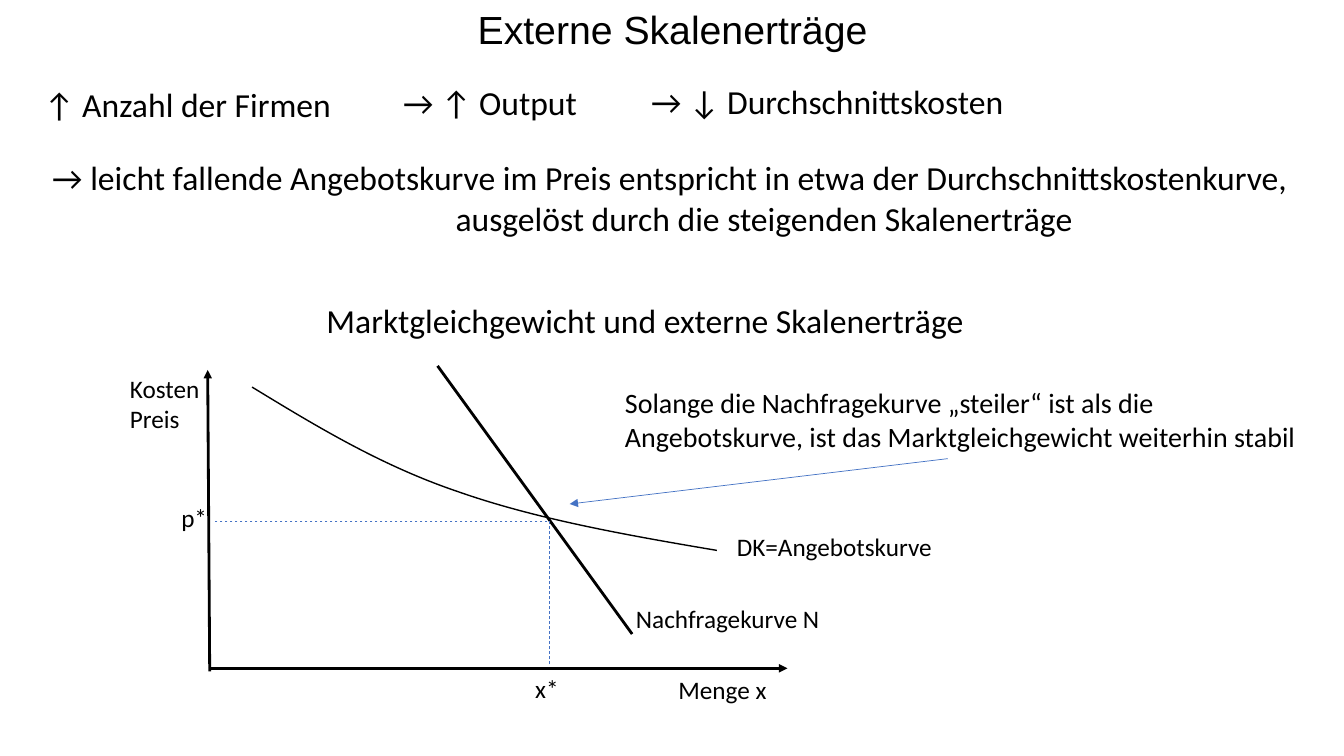
"""Build the slide on external economies of scale."""
from lxml.etree import SubElement
from pptx import Presentation
from pptx.dml.color import RGBColor
from pptx.enum.dml import MSO_LINE_DASH_STYLE as Dash
from pptx.enum.shapes import MSO_CONNECTOR as Connector
from pptx.enum.text import MSO_ANCHOR as Anchor, MSO_AUTO_SIZE as Fit, PP_ALIGN as Align
from pptx.oxml.ns import qn
from pptx.util import Inches, Pt

BLACK = RGBColor(0x00, 0x00, 0x00)
BLUE = RGBColor(0x44, 0x72, 0xC4)
WIDTH, HEIGHT = Inches(13.33), Inches(7.5)
COLUMNS, ROWS = 1333, 750

TITLE = {"size": Pt(28), "name": "Arial"}
BODY = {"size": Pt(24), "name": "Calibri"}
NOTE = {"size": Pt(20), "name": "Calibri"}
LABEL = {"size": Pt(18), "name": "Calibri"}
WRAPPED = {"word_wrap": True, "auto_size": Fit.NONE}
GROWING = {"word_wrap": True, "auto_size": Fit.SHAPE_TO_FIT_TEXT}
TIGHT = {"word_wrap": False, "auto_size": Fit.SHAPE_TO_FIT_TEXT}
CENTRED = {**WRAPPED, "vertical_anchor": Anchor.MIDDLE}
CENTRED_LINE = {"alignment": Align.CENTER, "line_spacing": 0.9}

TEXTS = [
    ((167, -3, 1000, 70), ["Externe Skalenerträge"], TITLE, CENTRED, CENTRED_LINE),
    ((34, 78, 307, 56), ["↑ Anzahl der Firmen"], BODY, WRAPPED, {}),
    ((390, 76, 202, 50), ["→ ↑ Output"], BODY, TIGHT, {}),
    ((636, 75, 373, 50), ["→ ↓ Durchschnittskosten"], BODY, TIGHT, {}),
    ((42, 151, 1257, 50), [
        "→ leicht fallende Angebotskurve im Preis entspricht in etwa der Durchschnittskostenkurve,",
        "ausgelöst durch die steigenden Skalenerträge"], BODY, WRAPPED, {}),
    ((314, 293, 656, 59), ["Marktgleichgewicht und externe Skalenerträge"], BODY, WRAPPED, {}),
    ((610, 378, 690, 59), [
        "Solange die Nachfragekurve „steiler“ ist als die Angebotskurve, "
        "ist das Marktgleichgewicht weiterhin stabil"], NOTE, WRAPPED, {}),
    ((119, 365, 90, 71), ["Kosten", "Preis"], LABEL, TIGHT, {}),
    ((663, 664, 109, 40), ["Menge x"], LABEL, TIGHT, {}),
    ((721, 522, 220, 40), ["DK=Angebotskurve"], LABEL, GROWING, {}),
    ((621, 594, 210, 40), ["Nachfragekurve N"], LABEL, GROWING, {}),
    ((170, 493, 46, 40), ["p*"], LABEL, TIGHT, {}),
    ((521, 663, 44, 40), ["x*"], LABEL, TIGHT, {}),
]
SECOND_LINE_INDENT = 400

AXIS = {"color": BLACK, "width": Pt(2), "arrow": True}
DEMAND = {"color": BLACK, "width": Pt(2)}
GUIDE = {"color": BLUE, "width": Pt(0.5), "dash": Dash.DASH}
POINTER = {"color": BLUE, "width": Pt(0.5), "arrow": True}
LINES = [
    ((208, 666), (206, 367), AXIS),
    ((207, 663), (781, 663), AXIS),
    ((434, 363), (627, 629), DEMAND),
    ((543, 517), (212, 517), GUIDE),
    ((545, 659), (545, 517), GUIDE),
    ((940, 455), (565, 500), POINTER),
]
SUPPLY_START = (250, 384)
SUPPLY_BENDS = [(314, 423), (378, 462), (455, 488), (532, 515), (622, 531), (711, 546)]


def place(column, row):
    return round(column * WIDTH / COLUMNS), round(row * HEIGHT / ROWS)


def apply(target, values):
    for name, value in values.items():
        setattr(target, name, value)


def add_text(page, area, lines, font, frame_format, para_format):
    box = page.shapes.add_textbox(*place(*area[:2]), *place(*area[2:]))
    frame = box.text_frame
    apply(frame, frame_format)
    for index, line in enumerate(lines):
        para = frame.paragraphs[0] if index == 0 else frame.add_paragraph()
        apply(para, para_format)
        span = para.add_run()
        span.text = line
        apply(span.font, font)
        span.font.color.rgb = BLACK
        if index and font is BODY:
            indent = place(SECOND_LINE_INDENT, 0)[0]
            para._p.get_or_add_pPr().set("marL", str(indent))


def style_line(line, color, width, dash=None, arrow=False):
    line.color.rgb = color
    apply(line, {"width": width, "dash_style": dash})
    if arrow:
        SubElement(line._get_or_add_ln(), qn("a:tailEnd"), type="triangle")


def add_line(page, start, end, style):
    line = page.shapes.add_connector(Connector.STRAIGHT, *place(*start), *place(*end))
    style_line(line.line, **style)
    SubElement(line._element.spPr, qn("a:effectLst"))


def add_supply_curve(page):
    builder = page.shapes.build_freeform(*place(*SUPPLY_START))
    builder.add_line_segments([place(*bend) for bend in SUPPLY_BENDS], close=False)
    curve = builder.convert_to_shape()
    steps = list(curve._element.iter(qn("a:lnTo")))
    outline = steps[0].getparent()
    for first in range(0, len(steps), 3):
        bend = SubElement(outline, qn("a:cubicBezTo"))
        for step in steps[first:first + 3]:
            bend.append(step[0])
            outline.remove(step)
    curve.fill.background()
    curve.shadow.inherit = False
    style_line(curve.line, BLACK, Pt(1))


def main():
    deck = Presentation()
    apply(deck, {"slide_width": WIDTH, "slide_height": HEIGHT})
    page = deck.slides.add_slide(deck.slide_layouts[6])
    for line in LINES:
        add_line(page, *line)
    add_supply_curve(page)
    for text in TEXTS:
        add_text(page, *text)
    deck.save("out.pptx")


if __name__ == "__main__":
    main()
